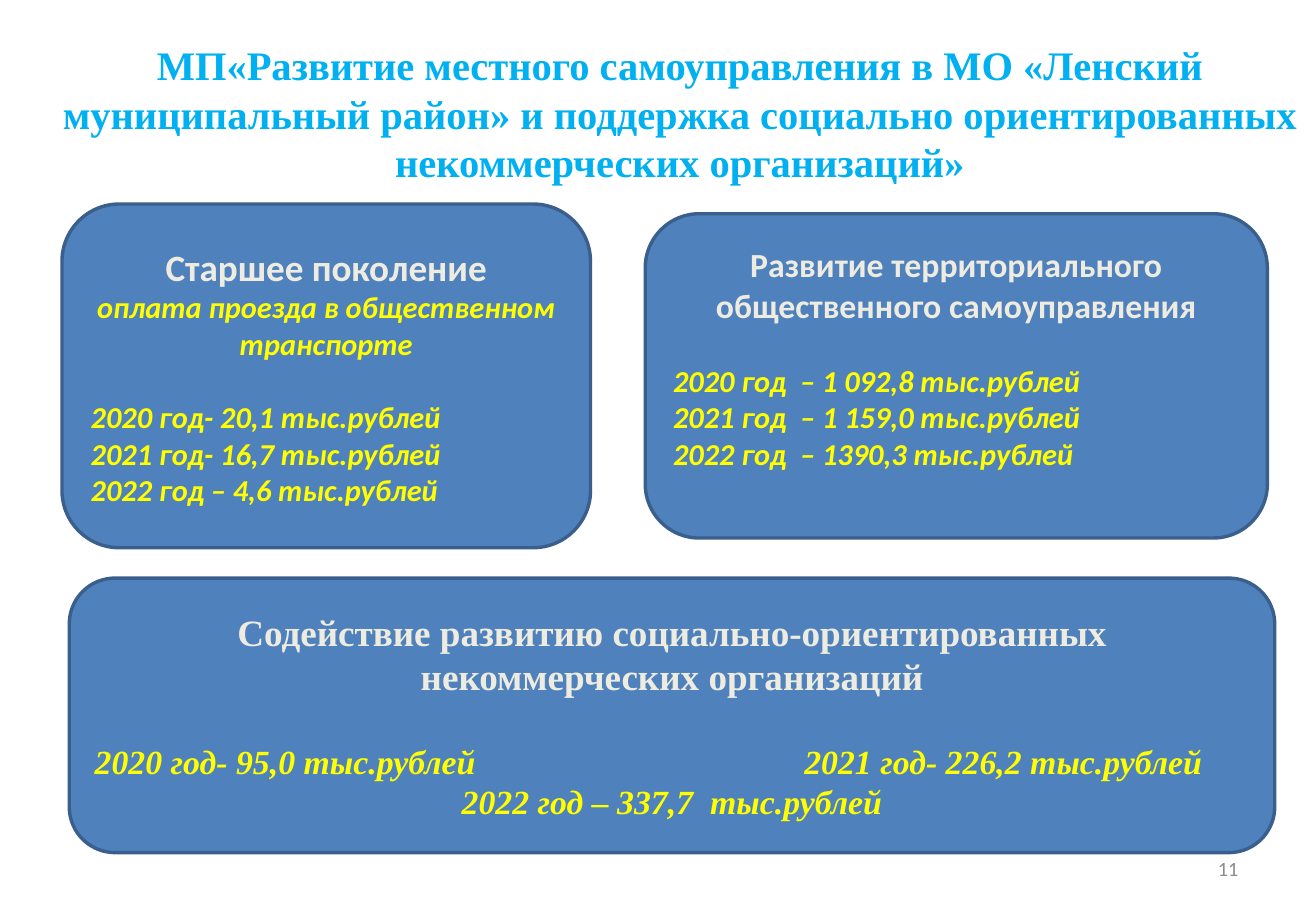
import pptx
import pptx.util
import pptx.dml.color
import pptx.enum.text
import pptx.enum.shapes
import lxml.etree

Inches, Pt = pptx.util.Inches, pptx.util.Pt
ALIGN = pptx.enum.text.PP_ALIGN
HEX = {"title": "00B0F0", "fill": "4F81BD", "line": "3A5F8C",
       "head": "EEECE1", "sum": "FFFF00", "page": "8C8C8C"}
SERIF, SANS = "Times New Roman", "Calibri"


def rgb(name):
    return pptx.dml.color.RGBColor.from_string(HEX[name])


def write(frame, text, size=18, font=SANS, color="sum", bold=True,
          italic=False, align=ALIGN.LEFT, gap=0, tab=None):
    """Fill the empty first paragraph of the frame, or add one after it."""
    first = frame.paragraphs[0]
    para = frame.add_paragraph() if first.runs else first
    para.alignment = align
    para.space_before = Pt(gap)
    run = para.add_run()
    run.text = text
    run.font.size, run.font.name = Pt(size), font
    run.font.bold, run.font.italic = bold, italic
    run.font.color.rgb = rgb(color)
    if tab:
        props = para._p.get_or_add_pPr()
        ns = "{http://schemas.openxmlformats.org/drawingml/2006/main}"
        stops = lxml.etree.SubElement(props, ns + "tabLst")
        lxml.etree.SubElement(stops, ns + "tab", pos=str(Inches(tab)), algn="l")


deck = pptx.Presentation()
deck.slide_width, deck.slide_height = Inches(10.83), Inches(7.5)
slide = deck.slides.add_slide(deck.slide_layouts[5])

# Page number
page = slide.shapes.add_textbox(Inches(7.76), Inches(6.95), Inches(2.53), Inches(0.4))
page.text_frame.word_wrap = True
page.text_frame.vertical_anchor = pptx.enum.text.MSO_ANCHOR.MIDDLE
write(page.text_frame, "11", size=12, color="page", bold=False, align=ALIGN.RIGHT)

# Title
title = slide.shapes.title
title.left, title.top = Inches(0.36), Inches(0.25)
title.width, title.height = Inches(10.47), Inches(1.36)
title.text_frame.auto_size = pptx.enum.text.MSO_AUTO_SIZE.NONE
title.text_frame.vertical_anchor = pptx.enum.text.MSO_ANCHOR.MIDDLE
write(title.text_frame,
      "МП«Развитие местного самоуправления в МО «Ленский муниципальный район» "
      "и поддержка социально ориентированных некоммерческих организаций»",
      size=24, font=SERIF, color="title", align=ALIGN.CENTER)

# Programme cards: place, bottom inset, heading format, then lines of sums
MID = {"align": ALIGN.CENTER}
cards = [
    ((0.51, 1.68, 4.35, 2.83), 0.05, "Старшее поколение", {"size": 22}, {},
     [("оплата проезда в общественном транспорте", MID),
      ("2020 год- 20,1 тыс.рублей", {"gap": 22}),
      ("2021 год- 16,7 тыс.рублей", {}),
      ("2022 год – 4,6 тыс.рублей", {})]),
    ((0.57, 4.76, 9.92, 2.26), 0.05,
     "Содействие развитию социально-ориентированных некоммерческих организаций",
     {"size": 22, "font": SERIF}, {"size": 20, "font": SERIF},
     [("2020 год- 95,0 тыс.рублей\t2021 год- 226,2 тыс.рублей",
       {"gap": 25, "tab": 5.84}),
      ("2022 год – 337,7  тыс.рублей", MID)]),
    ((5.31, 1.76, 5.12, 2.67), 0.35,
     "Развитие территориального общественного самоуправления", {"size": 20}, {},
     [("2020 год  – 1 092,8 тыс.рублей", {"gap": 22}),
      ("2021 год  – 1 159,0 тыс.рублей", {}),
      ("2022 год  – 1390,3 тыс.рублей", {})]),
]
for place, inset, head, look, body, lines in cards:
    card = slide.shapes.add_shape(pptx.enum.shapes.MSO_SHAPE.ROUNDED_RECTANGLE,
                                  *[Inches(n) for n in place])
    card.shadow.inherit = False
    card.fill.solid()
    card.fill.fore_color.rgb = rgb("fill")
    card.line.color.rgb = rgb("line")
    card.line.width = Pt(2)
    frame = card.text_frame
    frame.word_wrap = True
    frame.vertical_anchor = pptx.enum.text.MSO_ANCHOR.MIDDLE
    frame.margin_bottom = Inches(inset)
    write(frame, head, color="head", **MID, **look)
    for text, extra in lines:
        write(frame, text, italic=True, **body, **extra)

deck.save("out.pptx")
